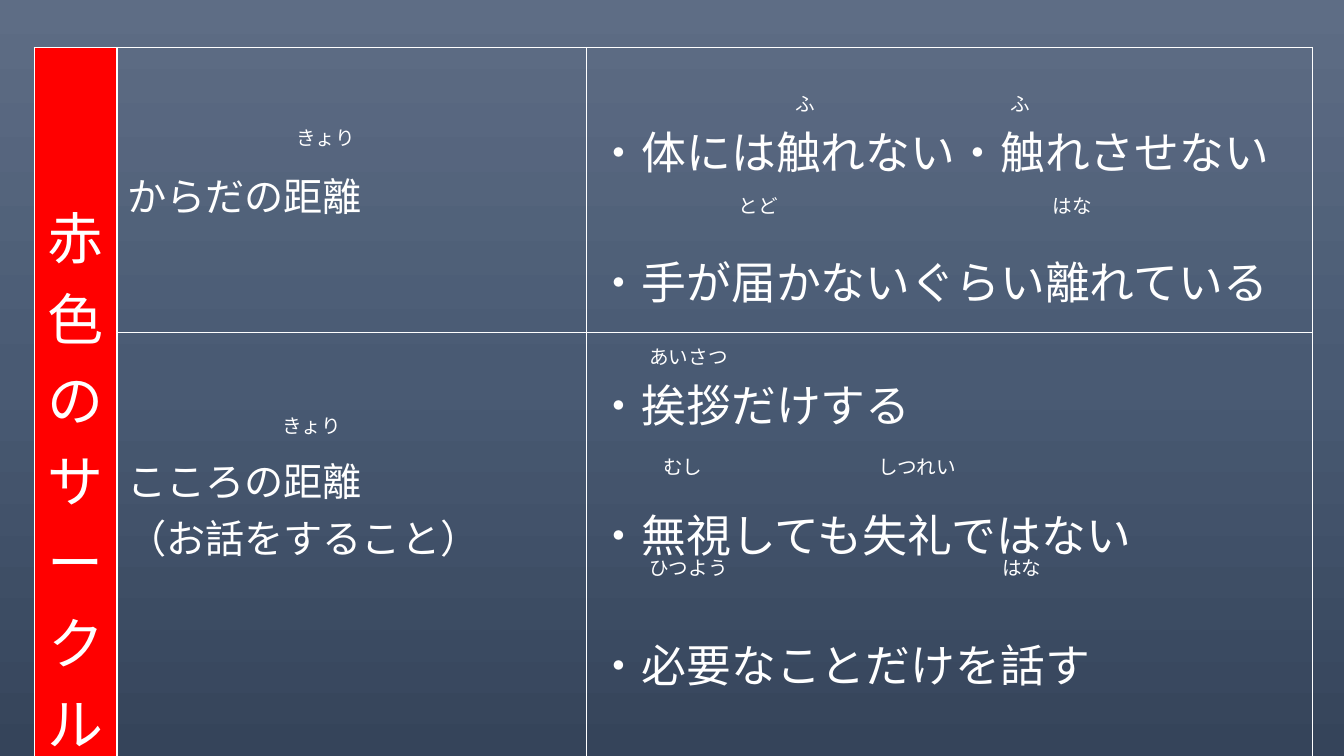
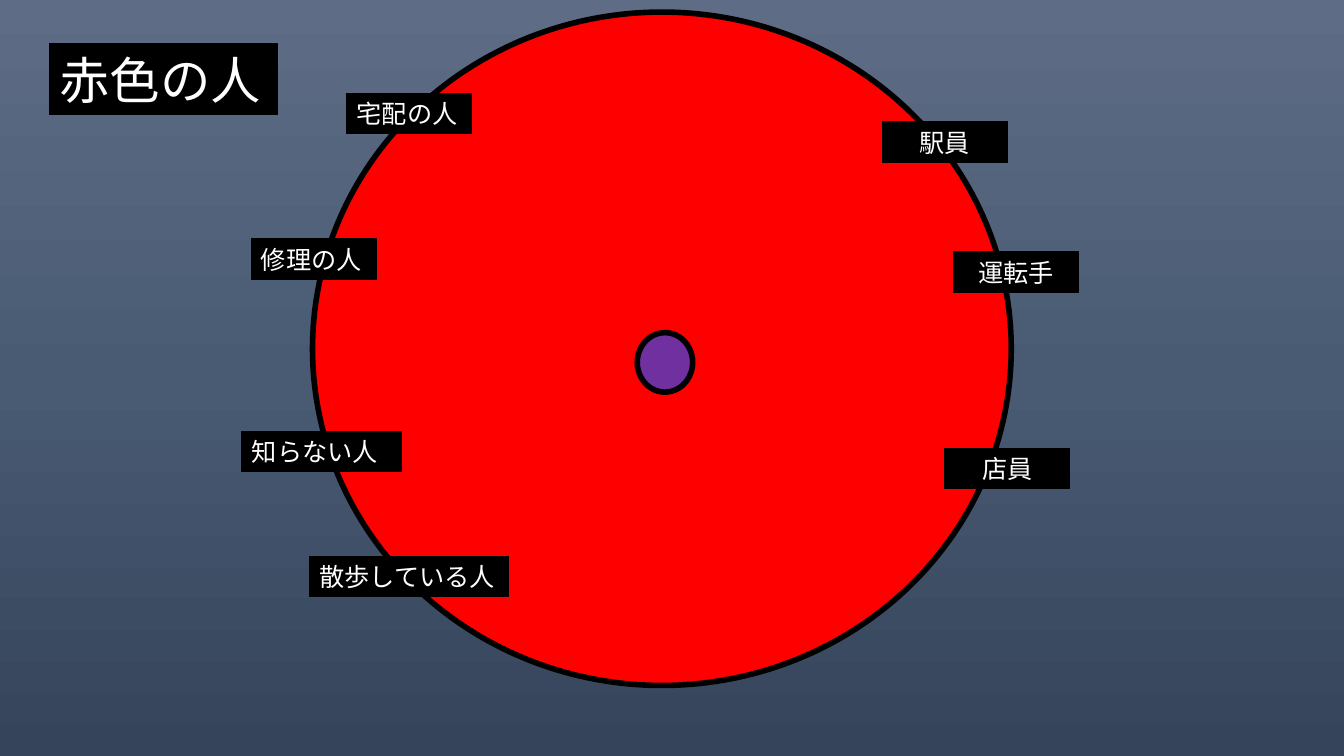
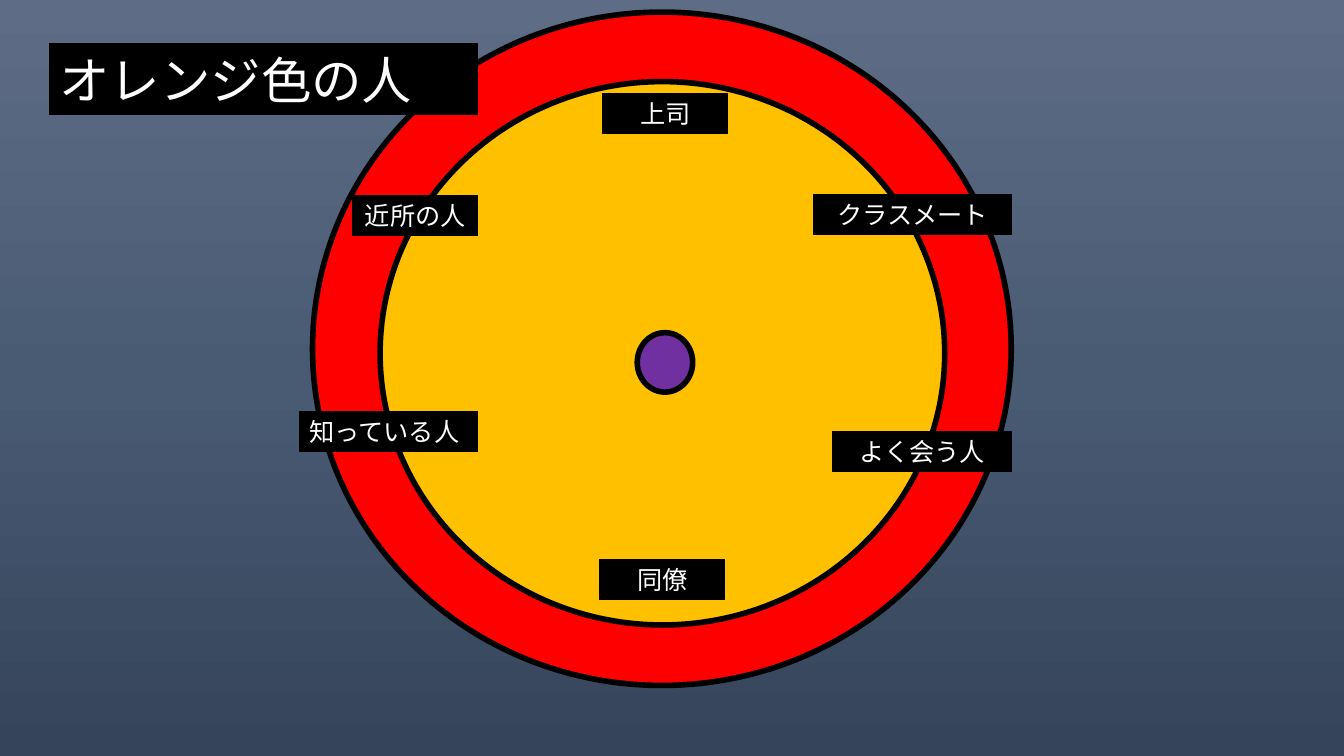
"""Build three slides about personal distance: a rule table and two circle diagrams."""
from copy import deepcopy

from lxml import etree
from pptx import Presentation
from pptx.dml.color import RGBColor
from pptx.enum import shapes, text
from pptx.oxml.ns import qn
from pptx.util import Inches, Pt

WHITE = RGBColor(0xFF, 0xFF, 0xFF)
BLACK = RGBColor(0, 0, 0)
RED = RGBColor(0xFF, 0, 0)
ORANGE = RGBColor(0xFF, 0xC0, 0)
PURPLE = RGBColor(0x70, 0x30, 0xA0)
BACKGROUND = [
    (0, RGBColor(0x5E, 0x6D, 0x85)),
    (0.5, RGBColor(0x49, 0x5A, 0x73)),
    (1, RGBColor(0x35, 0x44, 0x5A)),
]
FONT = "Noto Sans CJK JP"
LINE_HEIGHT = 1.45
LEFT, CENTER = text.PP_ALIGN.LEFT, text.PP_ALIGN.CENTER

TABLE_BOX = (0.34, 0.47, 12.68, 6.09)
COLUMNS = (0.82, 4.66, 7.2)
ROWS = (2.83, 3.26)
HEADING = "赤色のサークル"
TOPIC_SIZE, RULE_SIZE, READING_SIZE = 28, 32, 14
TOPICS = [["からだの距離"], ["こころの距離", "（お話をすること）"]]
RULES = [
    (32, ["・体には触れない・触れさせない", "・手が届かないぐらい離れている"]),
    (16, ["・挨拶だけする", "・無視しても失礼ではない", "・必要なことだけを話す"]),
]
READINGS = [
    (2.84, 1.2, [(0, "きょり")]),
    (2.7, 4.06, [(0, "きょり")]),
    (7.79, 0.86, [(0, "ふ"), (11, "ふ")]),
    (7.23, 1.87, [(0, "とど"), (16, "はな")]),
    (6.34, 3.37, [(0, "あいさつ")]),
    (6.48, 4.46, [(0, "むし"), (11, "しつれい")]),
    (6.34, 5.47, [(0, "ひつよう"), (18, "はな")]),
]

OUTER_CIRCLE = (3.1, 0.12, 6.93, 6.68, RED)
MIDDLE_CIRCLE = (3.77, 0.81, 5.6, 5.39, ORANGE)
SELF_CIRCLE = (6.32, 3.3, 0.55, 0.59, PURPLE)
LABEL_HEIGHT, LABEL_SIZE = 0.4, 18
DIAGRAMS = [
    {
        "title": ("赤色の人", 2.26),
        "circles": [OUTER_CIRCLE, SELF_CIRCLE],
        "labels": [
            ("宅配の人", 3.44, 0.93, 1.24, LEFT),
            ("修理の人", 2.49, 2.37, 1.24, LEFT),
            ("知らない人", 2.4, 4.28, 1.58, LEFT),
            ("散歩している人", 3.07, 5.52, 1.97, LEFT),
            ("駅員", 8.75, 1.21, 1.24, CENTER),
            ("運転手", 9.46, 2.5, 1.24, CENTER),
            ("店員", 9.37, 4.45, 1.24, CENTER),
        ],
    },
    {
        "title": ("オレンジ色の人", 4.25),
        "circles": [OUTER_CIRCLE, MIDDLE_CIRCLE, SELF_CIRCLE],
        "labels": [
            ("上司", 5.98, 0.93, 1.24, CENTER),
            ("近所の人", 3.5, 1.94, 1.24, CENTER),
            ("クラスメート", 8.07, 1.93, 1.96, CENTER),
            ("知っている人", 2.97, 4.08, 1.77, LEFT),
            ("よく会う人", 8.26, 4.28, 1.77, CENTER),
            ("同僚", 5.95, 5.55, 1.24, CENTER),
        ],
    },
]


def lengths(*values):
    return [Inches(value) for value in values]


def write(frame, lines, size, align=LEFT, gap=0):
    frame.text = "\n".join(lines)
    for index, paragraph in enumerate(frame.paragraphs):
        paragraph.alignment = align
        if gap and index:
            paragraph.space_before = Pt(gap)
        for run in paragraph.runs:
            run.font.size = Pt(size)
            run.font.name = FONT
            run.font.color.rgb = WHITE
            east_asian = etree.SubElement(run.font._element, qn("a:ea"))
            east_asian.set("typeface", FONT)


def paint(shape, color, line_width):
    shape.fill.solid()
    shape.fill.fore_color.rgb = color
    shape.line.color.rgb = BLACK
    shape.line.width = Pt(line_width)


def write_label(shape, caption, size, align):
    paint(shape, BLACK, 0.75)
    frame = shape.text_frame
    write(frame, [caption], size, align)
    frame.word_wrap = True
    frame.auto_size = text.MSO_AUTO_SIZE.NONE
    frame.vertical_anchor = text.MSO_ANCHOR.MIDDLE


def add_shape(slide, kind, *box):
    shape = slide.shapes.add_shape(kind, *lengths(*box))
    shape.shadow.inherit = False
    return shape


def set_background(master):
    fill = master.background.fill
    fill.gradient()
    fill.gradient_angle = 270
    stop_list = master.element.find(".//" + qn("a:gsLst"))
    stop_list.append(deepcopy(stop_list[0]))
    for stop, (position, color) in zip(fill.gradient_stops, BACKGROUND):
        stop.position = position
        stop.color.rgb = color


def add_borders(cell):
    properties = cell._tc.get_or_add_tcPr()
    for index, side in enumerate(("a:lnL", "a:lnR", "a:lnT", "a:lnB")):
        line = etree.Element(qn(side), w=str(Pt(1)))
        fill = etree.SubElement(line, qn("a:solidFill"))
        etree.SubElement(fill, qn("a:srgbClr"), val=str(WHITE))
        properties.insert(index, line)


def fill_cell(cell, lines, size, lead, gap=0):
    write(cell.text_frame, lines, size, gap=gap)
    cell.margin_top = Inches(0.05) + Pt(lead * LINE_HEIGHT)


def add_rule_table(slide):
    table = slide.shapes.add_table(len(ROWS), len(COLUMNS), *lengths(*TABLE_BOX)).table
    table.first_row = table.horz_banding = False
    for column, width in zip(table.columns, COLUMNS):
        column.width = Inches(width)
    for row, height in zip(table.rows, ROWS):
        row.height = Inches(height)
    for cell in table.iter_cells():
        cell.fill.background()
        add_borders(cell)
    heading = table.cell(0, 0)
    heading.merge(table.cell(len(ROWS) - 1, 0))
    heading.fill.solid()
    heading.fill.fore_color.rgb = RED
    heading.vertical_anchor = text.MSO_ANCHOR.MIDDLE
    heading._tc.get_or_add_tcPr().set("vert", "eaVert")
    write(heading.text_frame, [HEADING], 40, CENTER)
    for row, (topic, (lead, rules)) in enumerate(zip(TOPICS, RULES)):
        fill_cell(table.cell(row, 1), topic, TOPIC_SIZE, 2 * TOPIC_SIZE)
        fill_cell(table.cell(row, 2), rules, RULE_SIZE, lead, RULE_SIZE * LINE_HEIGHT)


def add_readings(slide):
    character = READING_SIZE / 72
    for left, top, readings in READINGS:
        for offset, reading in readings:
            width = len(reading) * character + 0.3
            box = lengths(left + offset * character, top, width, 0.34)
            frame = slide.shapes.add_textbox(*box).text_frame
            write(frame, [reading], READING_SIZE)


def add_diagram(slide, diagram):
    for *box, color in diagram["circles"]:
        paint(add_shape(slide, shapes.MSO_SHAPE.OVAL, *box), color, 4)
    for caption, left, top, width, align in diagram["labels"]:
        label = add_shape(slide, shapes.MSO_SHAPE.RECTANGLE, left, top, width, LABEL_HEIGHT)
        write_label(label, caption, LABEL_SIZE, align)
    caption, width = diagram["title"]
    title = slide.shapes.title
    title.left, title.top, title.width, title.height = lengths(0.49, 0.43, width, 0.71)
    write_label(title, caption, 36, LEFT)
    slide.shapes.element.append(title.element)


def main():
    presentation = Presentation()
    presentation.slide_width, presentation.slide_height = lengths(13.33, 7.5)
    set_background(presentation.slide_master)
    title_only, blank = presentation.slide_layouts[5], presentation.slide_layouts[6]
    table_slide = presentation.slides.add_slide(blank)
    add_rule_table(table_slide)
    add_readings(table_slide)
    for diagram in DIAGRAMS:
        add_diagram(presentation.slides.add_slide(title_only), diagram)
    presentation.save("out.pptx")


if __name__ == "__main__":
    main()
